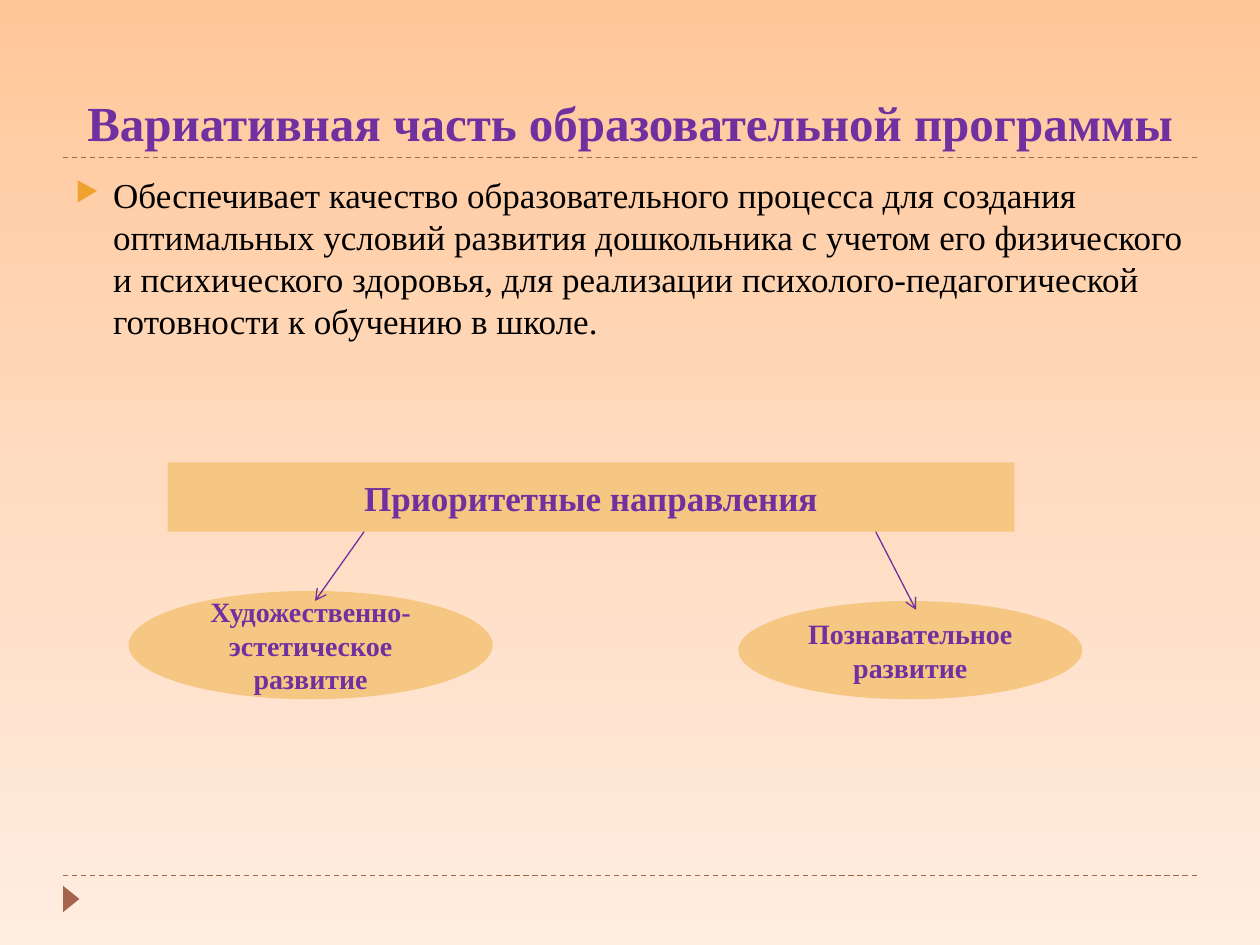
from copy import deepcopy
from dataclasses import dataclass

from lxml import etree
from pptx import Presentation
from pptx import util as u
from pptx.dml.color import RGBColor
from pptx.enum import dml, shapes, text
from pptx.oxml.ns import qn


@dataclass(frozen=True)
class Theme:
    font: str = "Times New Roman"
    background: tuple = ("FFC798", "FFDBC0", "FFEDE0")
    accent: str = "7030A0"
    body: str = "000000"
    panel: str = "F6C782"
    rule: str = "A5644E"
    bullet: str = "F0A22E"
    title_size: int = 28
    body_size: int = 20
    branch_size: int = 16
    line_width: float = 0.75


THEME = Theme()
Inches = u.Inches


def color(value):
    return RGBColor.from_string(value)


def add_child(parent, tag, **attributes):
    return etree.SubElement(parent, qn(tag), attributes)


def write(shape, content, size, ink, bold=False, align=text.PP_ALIGN.CENTER,
          anchor=text.MSO_ANCHOR.MIDDLE):
    frame = shape.text_frame
    frame.text = content
    frame.word_wrap = True
    frame.vertical_anchor = anchor
    paragraph = frame.paragraphs[0]
    paragraph.alignment = align
    font = paragraph.runs[0].font
    font.name, font.size, font.bold = THEME.font, u.Pt(size), bold
    font.color.rgb = color(ink)
    return paragraph


def add_panel(slide, kind, box, fill):
    shape = slide.shapes.add_shape(kind, *map(Inches, box))
    shape.shadow.inherit = False
    shape.fill.solid()
    shape.fill.fore_color.rgb = color(fill)
    shape.line.fill.background()
    return shape


def add_line(slide, start, end, ink):
    line = slide.shapes.add_connector(
        shapes.MSO_CONNECTOR.STRAIGHT, *map(Inches, (*start, *end)))
    line.line.color.rgb = color(ink)
    line.line.width = u.Pt(THEME.line_width)
    add_child(line._element.spPr, "a:effectLst")
    return line


def add_arrow(slide, start, end):
    arrow = add_line(slide, start, end, THEME.accent)
    add_child(arrow.line._get_or_add_ln(), "a:tailEnd", type="arrow")


def paint_background(slide):
    fill = slide.background.fill
    fill.gradient()
    fill.gradient_angle = 270
    stop_list = slide.element.find(".//" + qn("a:gsLst"))
    stop_list.insert(1, deepcopy(stop_list[0]))
    for index, (stop, value) in enumerate(zip(fill.gradient_stops, THEME.background)):
        stop.position = index / 2
        stop.color.rgb = color(value)


def add_frame(slide, left, right, rule_heights):
    for height in rule_heights:
        rule = add_line(slide, (left, height), (right, height), THEME.rule)
        rule.line.dash_style = dml.MSO_LINE.DASH
    marker = add_panel(slide, shapes.MSO_SHAPE.ISOSCELES_TRIANGLE,
                       (0.46, 7.07, 0.21, 0.13), THEME.rule)
    marker.rotation = 90


def add_title(slide, box, content):
    title = slide.shapes.add_textbox(*map(Inches, box))
    write(title, content, THEME.title_size, THEME.accent, bold=True,
          anchor=text.MSO_ANCHOR.BOTTOM)


def add_body(slide, box, content):
    body = slide.shapes.add_textbox(*map(Inches, box))
    paragraph = write(body, content, THEME.body_size, THEME.body,
                      align=text.PP_ALIGN.LEFT, anchor=text.MSO_ANCHOR.TOP)
    properties = paragraph._p.get_or_add_pPr()
    indent = Inches(0.3)
    properties.set("marL", str(indent))
    properties.set("indent", str(-indent))
    bullet_color = add_child(properties, "a:buClr")
    add_child(bullet_color, "a:srgbClr", val=THEME.bullet)
    add_child(properties, "a:buSzPct", val="76000")
    add_child(properties, "a:buChar", char="▶")


def add_directions(slide, box, heading, branches):
    bar = add_panel(slide, shapes.MSO_SHAPE.RECTANGLE, box, THEME.panel)
    write(bar, heading, THEME.body_size, THEME.accent, bold=True)
    bottom = box[1] + box[3]
    for content, branch_box, arrow_left, arrow_end in branches:
        branch = add_panel(slide, shapes.MSO_SHAPE.OVAL, branch_box, THEME.panel)
        write(branch, content, THEME.branch_size, THEME.accent, bold=True)
        add_arrow(slide, (arrow_left, bottom), arrow_end)


def main():
    presentation = Presentation()
    presentation.slide_width, presentation.slide_height = Inches(10), Inches(7.5)
    slide = presentation.slides.add_slide(presentation.slide_layouts[6])
    paint_background(slide)
    add_frame(slide, 0.5, 9.5, (6.95, 1.25))
    add_title(slide, (0.5, 0.17, 9, 1.08), "Вариативная часть образовательной программы")
    add_body(slide, (0.5, 1.33, 9, 5.4),
             "Обеспечивает качество образовательного процесса для создания "
             "оптимальных условий развития дошкольника с учетом его физического "
             "и психического здоровья, для реализации психолого-педагогической "
             "готовности к обучению в школе.")
    add_directions(slide, (1.33, 3.67, 6.72, 0.55), "Приоритетные направления", [
        ("Художественно-эстетическое развитие", (1.02, 4.69, 2.89, 0.86), 2.89, (2.5, 4.77)),
        ("Познавательное развитие", (5.86, 4.77, 2.73, 0.78), 6.95, (7.27, 4.84)),
    ])
    presentation.save("out.pptx")


if __name__ == "__main__":
    main()
